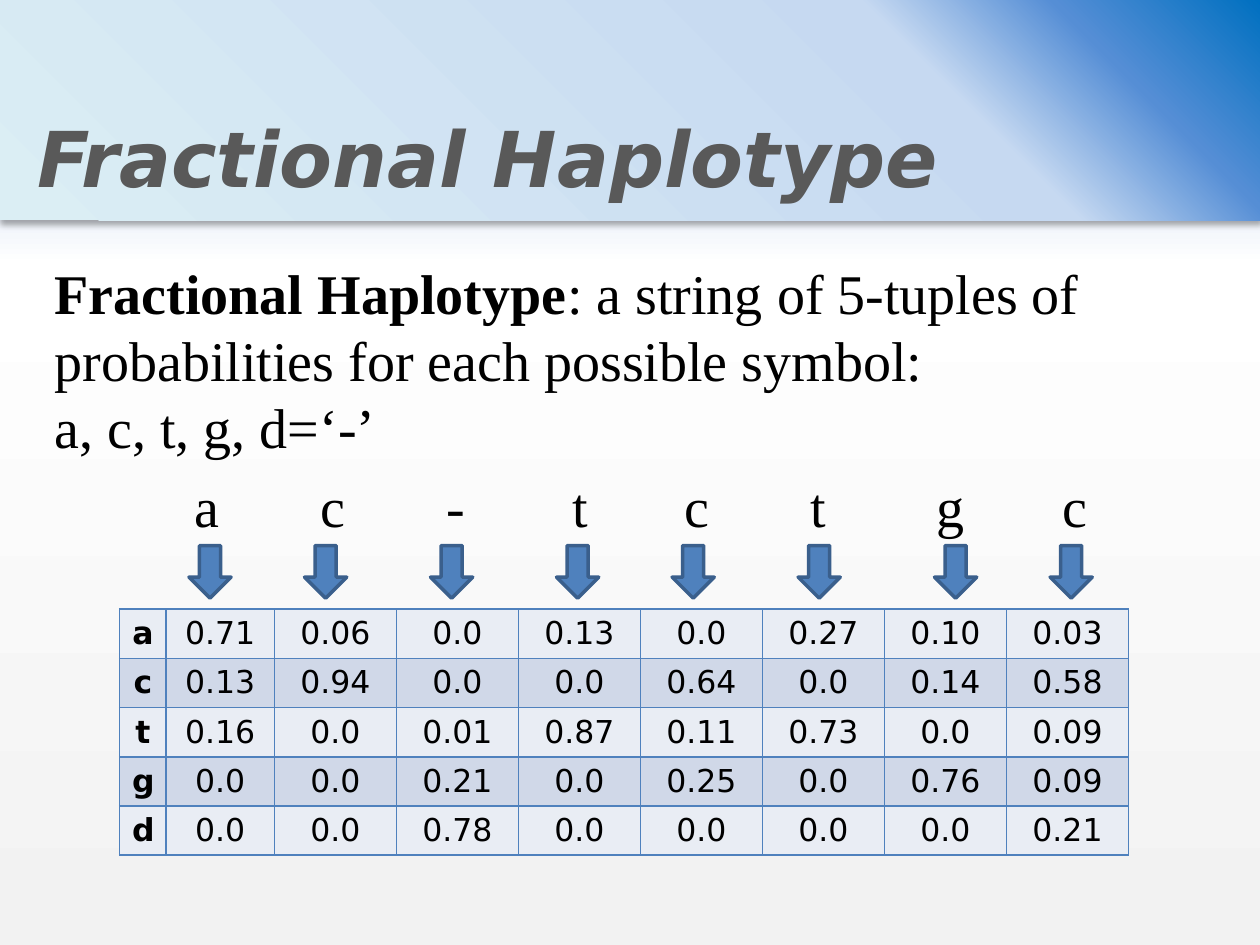
from lxml import etree
from pptx import Presentation
from pptx.dml.color import RGBColor
from pptx.enum.shapes import MSO_SHAPE as Shape
from pptx.enum.text import MSO_ANCHOR as Anchor, MSO_AUTO_SIZE as AutoSize, PP_ALIGN as Align
from pptx.oxml.ns import qn
from pptx.util import Cm, Pt

BLACK = RGBColor(0x00, 0x00, 0x00)
TITLE_GREY = RGBColor(0x59, 0x59, 0x59)
TITLE_GREEN = RGBColor(0x00, 0xB0, 0x50)
BLUE = RGBColor(0x4F, 0x81, 0xBD)
ARROW_EDGE = RGBColor(0x3A, 0x5F, 0x8C)
ROW_FILLS = (RGBColor(0xE9, 0xED, 0xF4), RGBColor(0xD0, 0xD8, 0xE8))
BACKGROUND_STOPS = (
    (0, RGBColor(0x9A, 0xB5, 0xE4)),
    (28, RGBColor(0xFF, 0xFF, 0xFF)),
    (100, RGBColor(0xF2, 0xF2, 0xF2)),
)
HEADER_STOPS = (
    (0, RGBColor(0x00, 0x70, 0xC0)),
    (14, RGBColor(0x55, 0x8E, 0xD5)),
    (27, RGBColor(0xC6, 0xD9, 0xF1)),
    (100, RGBColor(0xDB, 0xEE, 0xF4)),
)
SANS = "DejaVu Sans"
SERIF = "Times New Roman"
TAB_SIZE = Cm(2.54)

HAPLOTYPE = "\t a\t c\t -\t t\tc\tt\tg\tc"
PROBABILITIES = {
    "a": ("0.71", "0.06", "0.0", "0.13", "0.0", "0.27", "0.10", "0.03"),
    "c": ("0.13", "0.94", "0.0", "0.0", "0.64", "0.0", "0.14", "0.58"),
    "t": ("0.16", "0.0", "0.01", "0.87", "0.11", "0.73", "0.0", "0.09"),
    "g": ("0.0", "0.0", "0.21", "0.0", "0.25", "0.0", "0.76", "0.09"),
    "d": ("0.0", "0.0", "0.78", "0.0", "0.0", "0.0", "0.0", "0.21"),
}
COLUMN_WIDTHS = (0.94, 2.18) + (2.46,) * 7
ARROW_LEFTS = (3.81, 6.14, 8.68, 11.22, 13.55, 16.09, 18.84, 21.17)


def add_element(parent, tag, **attributes):
    values = {name: str(value) for name, value in attributes.items()}
    return etree.SubElement(parent, qn(tag), values)


def add_text(paragraph, text, font=SANS, size=18, color=BLACK, bold=False, italic=False):
    run = paragraph.add_run()
    run.text = text
    run.font.name = font
    run.font.size = Pt(size)
    run.font.color.rgb = color
    run.font.bold = bold
    run.font.italic = italic


def place(shape, left, top, width, height):
    shape.left, shape.top = Cm(left), Cm(top)
    shape.width, shape.height = Cm(width), Cm(height)


def set_gradient(fill, owner, stops, corner=False):
    fill.gradient()
    gradient = next(owner.iter(qn("a:gradFill")))
    for child in list(gradient):
        gradient.remove(child)
    stop_list = add_element(gradient, "a:gsLst")
    for position, color in stops:
        stop = add_element(stop_list, "a:gs", pos=position * 1000)
        add_element(stop, "a:srgbClr", val=color)
    if corner:
        direction = add_element(gradient, "a:path", path="circle")
        add_element(direction, "a:fillToRect", l=100000, b=100000)
    else:
        add_element(gradient, "a:lin", ang=90 * 60000, scaled=0)


def add_shadow(shape):
    shape.shadow.inherit = False
    effects = shape.element.spPr.find(qn("a:effectLst"))
    shadow = add_element(effects, "a:outerShdw", blurRad=Pt(3.5), dist=Pt(2.2),
                         dir=90 * 60000, rotWithShape=0)
    color = add_element(shadow, "a:srgbClr", val=BLACK)
    add_element(color, "a:alpha", val=32000)


def format_title(title):
    place(title, 0, 0, 25.4, 4.44)
    set_gradient(title.fill, title.element, HEADER_STOPS, corner=True)
    add_shadow(title)
    frame = title.text_frame
    frame.auto_size = AutoSize.NONE
    frame.vertical_anchor = Anchor.MIDDLE
    paragraph = frame.paragraphs[0]
    paragraph.alignment = Align.LEFT
    paragraph.line_spacing = 2.0
    paragraph.space_before = Pt(6)
    add_text(paragraph, " ", size=44, color=TITLE_GREEN)
    add_text(paragraph, "Fractional Haplotype", size=44, color=TITLE_GREY, bold=True, italic=True)


def set_master_tabs(master):
    for level in master.element.iter(qn("a:lvl1pPr")):
        level.set("defTabSz", str(TAB_SIZE))


def format_body_paragraph(paragraph):
    paragraph.space_before = Pt(6.4)
    properties = paragraph._p.get_or_add_pPr()
    properties.set("marL", "0")
    properties.set("indent", "0")
    properties.set("defTabSz", str(TAB_SIZE))
    add_element(properties, "a:buNone")


def format_body(body):
    place(body, 0.85, 5.08, 24.34, 13.55)
    frame = body.text_frame
    frame.auto_size = AutoSize.NONE
    definition = frame.paragraphs[0]
    format_body_paragraph(definition)
    add_text(definition, "Fractional Haplotype", font=SERIF, size=32, bold=True)
    add_text(definition, ": a string of 5-tuples of probabilities for each possible symbol: ",
             font=SERIF, size=32)
    definition.add_line_break()
    add_text(definition, "a, c, t, g, d=‘-’", font=SERIF, size=32)

    symbols = frame.add_paragraph()
    format_body_paragraph(symbols)
    add_text(symbols, HAPLOTYPE, font=SERIF, size=32)


def format_cell(cell, text, fill_color, bold):
    properties = cell._tc.get_or_add_tcPr()
    for side in ("a:lnL", "a:lnR", "a:lnT", "a:lnB"):
        border = add_element(properties, side, w=Pt(1))
        add_element(add_element(border, "a:solidFill"), "a:srgbClr", val=BLUE)
    cell.fill.solid()
    cell.fill.fore_color.rgb = fill_color
    paragraph = cell.text_frame.paragraphs[0]
    paragraph.alignment = Align.CENTER
    add_text(paragraph, text, bold=bold)


def add_probability_table(slide):
    table = slide.shapes.add_table(len(PROBABILITIES), len(COLUMN_WIDTHS),
                                   Cm(2.41), Cm(12.28), Cm(20.32), Cm(4.95)).table
    table.first_row = False
    for column, width in zip(table.columns, COLUMN_WIDTHS):
        column.width = Cm(width)
    for row_index, (symbol, values) in enumerate(PROBABILITIES.items()):
        table.rows[row_index].height = Cm(0.99)
        for column_index, text in enumerate((symbol,) + values):
            format_cell(table.cell(row_index, column_index), text,
                        ROW_FILLS[row_index % 2], bold=column_index == 0)


def add_arrows(slide):
    group = slide.shapes.add_group_shape()
    for left in ARROW_LEFTS:
        arrow = group.shapes.add_shape(Shape.DOWN_ARROW, Cm(left), Cm(11), Cm(0.85), Cm(1.06))
        arrow.shadow.inherit = False
        arrow.fill.solid()
        arrow.fill.fore_color.rgb = BLUE
        arrow.line.color.rgb = ARROW_EDGE
        arrow.line.width = Pt(2)


def main():
    presentation = Presentation()
    presentation.slide_width = Cm(25.4)
    presentation.slide_height = Cm(19.05)
    set_master_tabs(presentation.slide_master)
    slide = presentation.slides.add_slide(presentation.slide_layouts[1])
    set_gradient(slide.background.fill, slide.element, BACKGROUND_STOPS)
    format_title(slide.shapes.title)
    format_body(slide.placeholders[1])
    add_probability_table(slide)
    add_arrows(slide)
    presentation.save("out.pptx")


if __name__ == "__main__":
    main()
